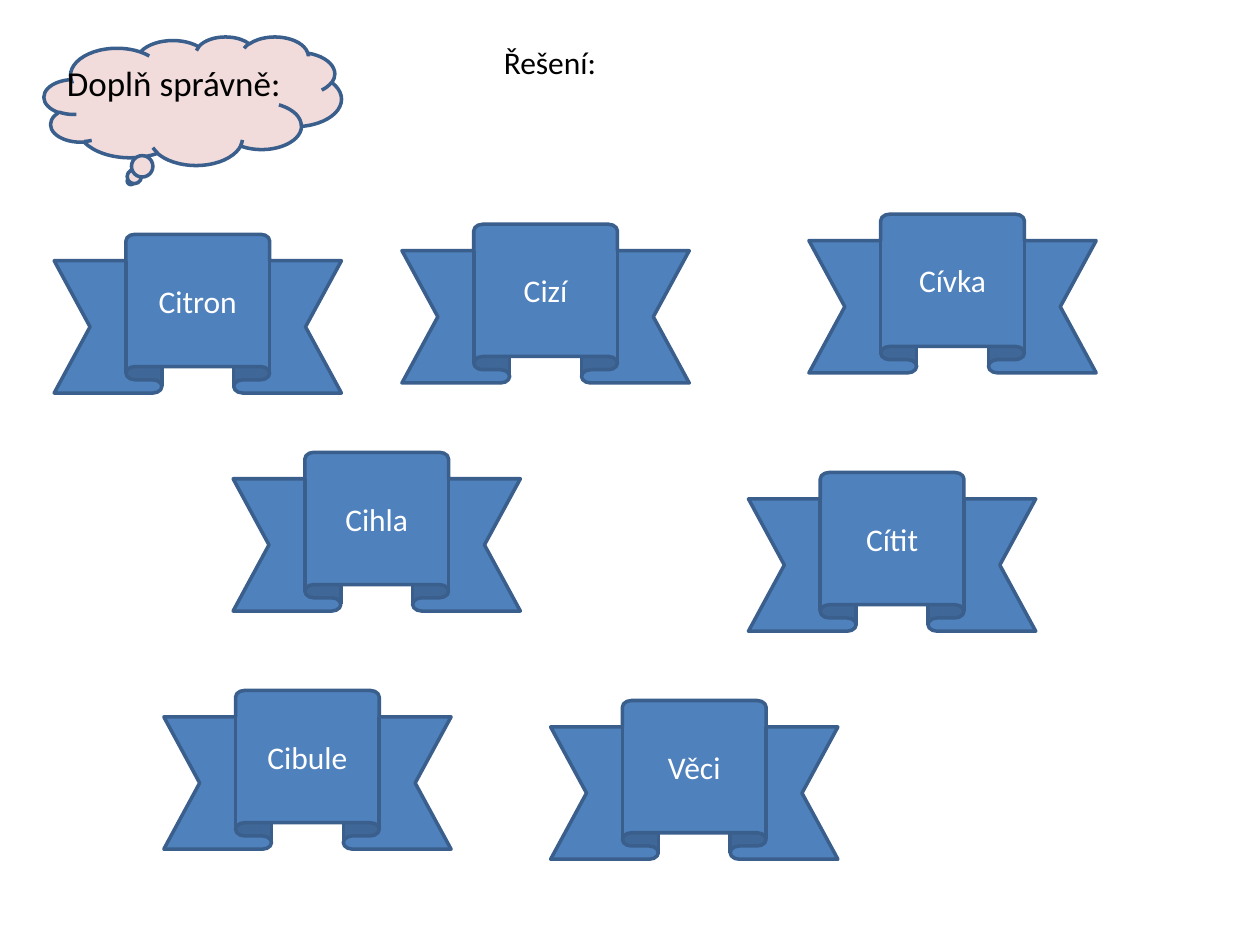
from pptx import Presentation
from pptx.dml.color import RGBColor
from pptx.enum.shapes import MSO_SHAPE
from pptx.enum.text import MSO_ANCHOR, MSO_AUTO_SIZE, PP_ALIGN
from pptx.util import Pt

CLOUD = MSO_SHAPE.CLOUD_CALLOUT
RIBBON = MSO_SHAPE.UP_RIBBON
TOP, MIDDLE = MSO_ANCHOR.TOP, MSO_ANCHOR.MIDDLE
LEFT, CENTER = PP_ALIGN.LEFT, PP_ALIGN.CENTER
GROW = MSO_AUTO_SIZE.SHAPE_TO_FIT_TEXT
TITLE_ONLY = 5

COLORS = {
    "cloud": "F2DCDB",
    "ribbon": "4F81BD",
    "outline": "3A5F8C",
    "dark": "000000",
    "light": "FFFFFF",
}
RIBBON_SIZE = (164.16, 90.72)
RIBBONS = [
    ("Citron", 30.96, 133.92),
    ("Cizí", 229.68, 128.16),
    ("Cihla", 133.2, 258.48),
    ("Cibule", 93.6, 394.56),
    ("Věci", 314.64, 400.32),
    ("Cítit", 427.68, 270),
    ("Cívka", 462.24, 122.4),
]


class WorksheetSlide:
    font_name = "Calibri"
    line_width = 2

    def __init__(self, slide):
        self.slide = slide

    def color(self, name):
        return RGBColor.from_string(COLORS[name])

    def set_text(self, shape, text, size, color, align, frame_format):
        frame = shape.text_frame
        for name, value in {"word_wrap": True, **frame_format}.items():
            setattr(frame, name, value)
        paragraph = frame.paragraphs[0]
        paragraph.alignment = align
        run = paragraph.add_run()
        run.text = text
        for name, value in {"name": self.font_name, "size": Pt(size)}.items():
            setattr(run.font, name, value)
        run.font.color.rgb = self.color(color)

    def shape(self, kind, left, top, width, height, fill):
        shape = self.slide.shapes.add_shape(
            kind, Pt(left), Pt(top), Pt(width), Pt(height))
        shape.shadow.inherit = False
        shape.fill.solid()
        shape.fill.fore_color.rgb = self.color(fill)
        shape.line.color.rgb = self.color("outline")
        shape.line.width = Pt(self.line_width)
        return shape

    def title(self, text, left, top, width, height, backdrop):
        title = self.slide.shapes.title
        box = {"left": left, "top": top, "width": width, "height": height}
        for name, value in box.items():
            setattr(title, name, Pt(value))
        self.set_text(title, text, 20, "dark", LEFT,
                      {"vertical_anchor": TOP, "auto_size": GROW})
        backdrop.element.addnext(title.element)

    def label(self, text, left, top, width, height):
        label = self.slide.shapes.add_textbox(
            Pt(left), Pt(top), Pt(width), Pt(height))
        self.set_text(label, text, 18, "dark", LEFT, {"auto_size": GROW})

    def ribbon(self, text, left, top):
        ribbon = self.shape(RIBBON, left, top, *RIBBON_SIZE, "ribbon")
        self.set_text(ribbon, text, 18, "light", CENTER,
                      {"vertical_anchor": MIDDLE})


def main():
    presentation = Presentation()
    presentation.slide_width, presentation.slide_height = Pt(720), Pt(540)
    layout = presentation.slide_layouts[TITLE_ONLY]
    worksheet = WorksheetSlide(presentation.slides.add_slide(layout))

    cloud = worksheet.shape(CLOUD, 25.2, 20.88, 169.92, 73.44, "cloud")
    worksheet.title("Doplň správně:", 30.96, 31.68, 289.44, 31.68, cloud)
    for text, left, top in RIBBONS:
        worksheet.ribbon(text, left, top)
    worksheet.label("Řešení:", 280.8, 20.88, 141.84, 28.8)

    presentation.save("out.pptx")


if __name__ == "__main__":
    main()
